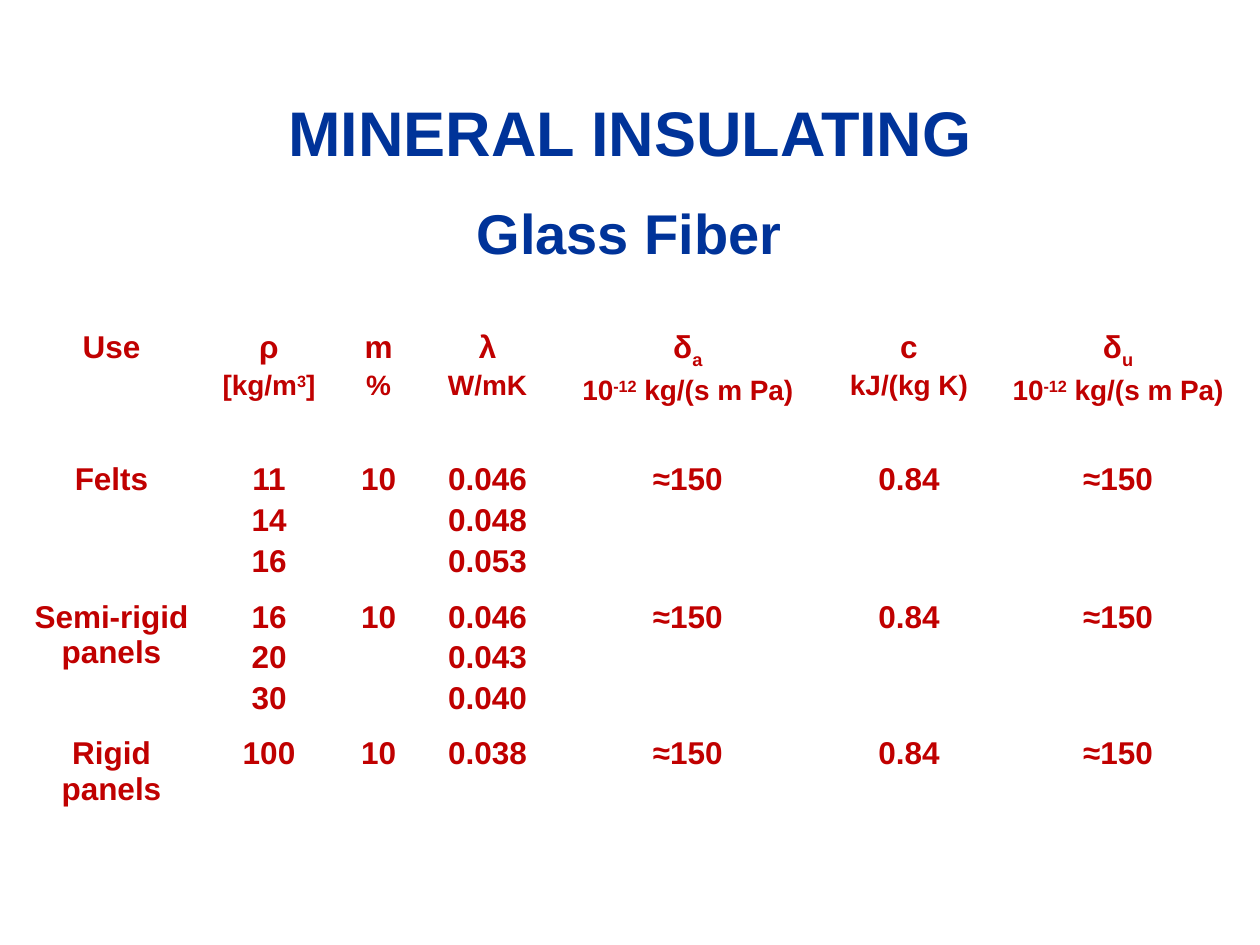
"""Build the slide on glass fiber as a mineral insulating material."""

from dataclasses import dataclass

import lxml.etree
import pptx
import pptx.dml.color
import pptx.enum.text
import pptx.oxml.ns
import pptx.util

Pt = pptx.util.Pt
RED = pptx.dml.color.RGBColor(0xC0, 0x00, 0x00)
BLUE = pptx.dml.color.RGBColor(0x00, 0x33, 0x99)
WHITE = pptx.dml.color.RGBColor(0xFF, 0xFF, 0xFF)
FONT = "Arial"
THIN, THICK = 1, 2.25


@dataclass(frozen=True)
class Part:
    text: str
    size: float = 18
    base: int = 0


@dataclass(frozen=True)
class Title:
    text: str
    size: float
    left: float
    top: float
    width: float
    height: float


Line = list[Part]
Cell = list[Line]

TITLES = [
    Title("MINERAL INSULATING", 36, 36, 54, 648, 41.76),
    Title("Glass Fiber", 32, 221.76, 110.16, 275.76, 45.36),
]
WIDTHS = [102.96, 77.04, 48.24, 76.32, 152.64, 100.08, 138.96]
HEIGHTS = [75.6, 78.48, 75.6, 75.6]
PERM = [Part("10", 16), Part("-12", 16, 30), Part(" kg/(s m Pa)", 16)]
HEAD: list[Cell] = [
    [[Part("Use")]],
    [[Part("ρ")], [Part("[kg/m", 16), Part("3", 16, 30), Part("]", 16)]],
    [[Part("m")], [Part("%", 16)]],
    [[Part("λ")], [Part("W/mK", 16)]],
    [[Part("δ"), Part("a", base=-25)], PERM],
    [[Part("c")], [Part("kJ/(kg K)", 16)]],
    [[Part("δ"), Part("u", base=-25)], PERM],
]
USES = [
    ("Felts", "11 14 16", "0.046 0.048 0.053"),
    ("Semi-rigid panels", "16 20 30", "0.046 0.043 0.040"),
    ("Rigid panels", "100", "0.038"),
]


def style(run, size: float, color) -> None:
    font = run.font
    font.name, font.size, font.bold = FONT, Pt(size), True
    font.color.rgb = color


def draw_title(slide, title: Title) -> None:
    box = slide.shapes.add_textbox(
        Pt(title.left), Pt(title.top), Pt(title.width), Pt(title.height))
    frame = box.text_frame
    frame.word_wrap = True
    frame.vertical_anchor = pptx.enum.text.MSO_ANCHOR.MIDDLE
    frame.text = title.text
    para = frame.paragraphs[0]
    para.alignment = pptx.enum.text.PP_ALIGN.CENTER
    style(para.runs[0], title.size, BLUE)


def stack(values: str) -> Cell:
    return [[Part(value)] for value in values.split()]


def make_row(use: str, mass: str, heat: str) -> list[Cell]:
    perm = stack("≈150")
    return [[[Part(use)]], stack(mass), stack("10"), stack(heat),
            perm, stack("0.84"), perm]


def fill_cell(cell, lines: Cell) -> None:
    frame = cell.text_frame
    frame.text = "\n".join("" for _ in lines)
    for para, line in zip(frame.paragraphs, lines):
        para.alignment = pptx.enum.text.PP_ALIGN.CENTER
        para.space_before = Pt(3)
        for part in line:
            run = para.add_run()
            run.text = part.text
            style(run, part.size, RED)
            if part.base:
                run.font._element.set("baseline", str(part.base * 1000))


def edge_cell(cell, edges: dict[str, bool]) -> None:
    name = pptx.oxml.ns.qn
    props = cell._tc.get_or_add_tcPr()
    for side, outer in edges.items():
        width = Pt(THICK if outer else THIN)
        edge = lxml.etree.SubElement(props, name("a:ln" + side), w=str(width))
        fill = lxml.etree.SubElement(edge, name("a:solidFill"))
        lxml.etree.SubElement(fill, name("a:srgbClr"), val=str(WHITE))
    cell.fill.background()


def draw_table(slide, rows: list[list[Cell]]) -> None:
    shape = slide.shapes.add_table(
        len(rows), len(WIDTHS), Pt(12.24), Pt(185.04),
        Pt(sum(WIDTHS)), Pt(sum(HEIGHTS)))
    table = shape.table
    table.first_row = table.horz_banding = False
    for col, width in zip(table.columns, WIDTHS):
        col.width = Pt(width)
    for row, height in zip(table.rows, HEIGHTS):
        row.height = Pt(height)
    for y, row in enumerate(rows):
        for x, lines in enumerate(row):
            cell = table.cell(y, x)
            fill_cell(cell, lines)
            edge_cell(cell, {"L": x == 0, "R": x == len(row) - 1,
                             "T": y == 0, "B": y == len(rows) - 1})


def main() -> None:
    deck = pptx.Presentation()
    deck.slide_width, deck.slide_height = Pt(720), Pt(540)
    slide = deck.slides.add_slide(deck.slide_layouts[6])
    for title in TITLES:
        draw_title(slide, title)
    draw_table(slide, [HEAD] + [make_row(*use) for use in USES])
    deck.save("out.pptx")


if __name__ == "__main__":
    main()
